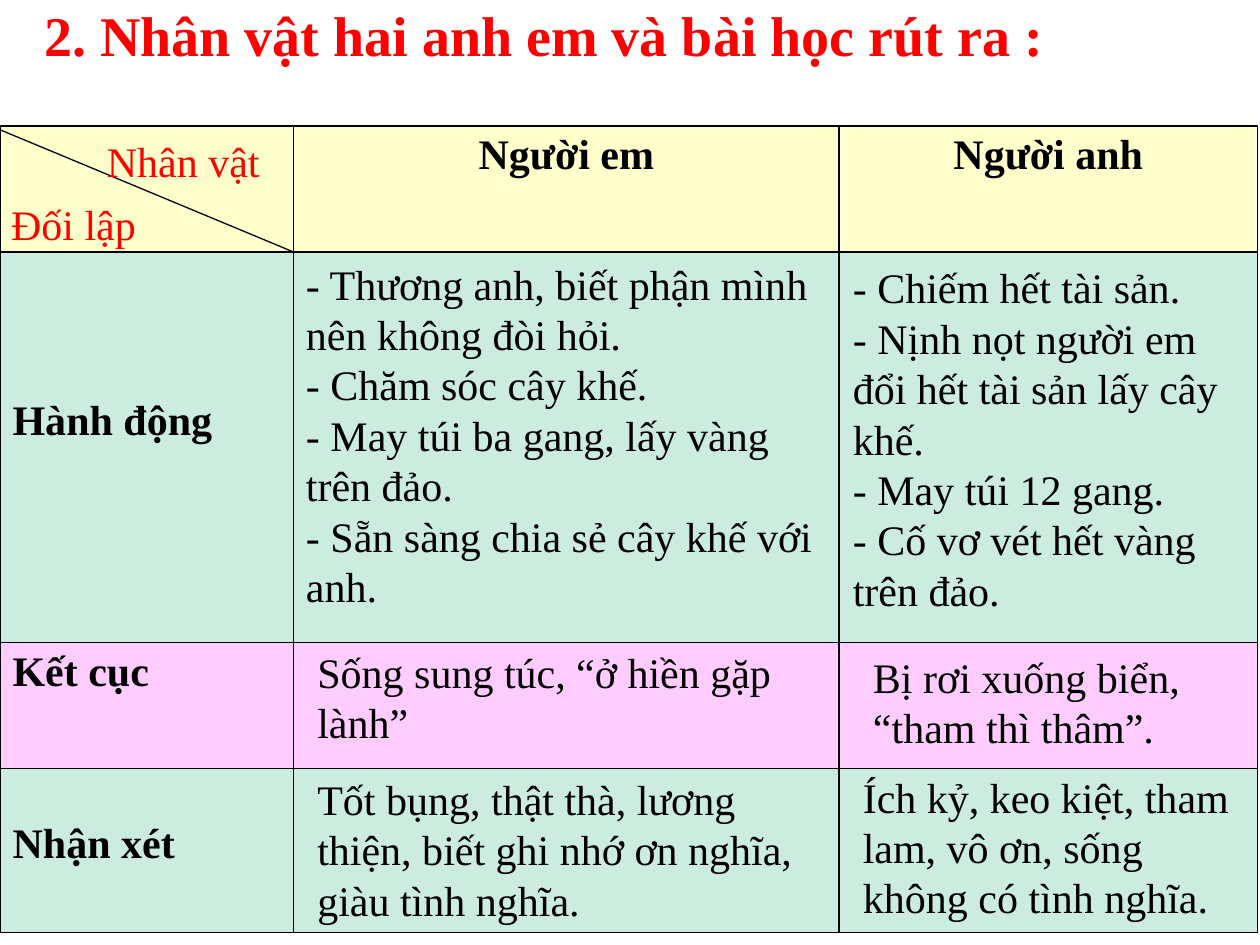
"""Build a slide contrasting the two brothers and the lesson drawn from them."""
from itertools import accumulate

from lxml.etree import SubElement
from pptx import Presentation
from pptx.dml.color import RGBColor
from pptx.enum.shapes import MSO_CONNECTOR
from pptx.enum.text import MSO_ANCHOR, PP_ALIGN
from pptx.oxml import parse_xml
from pptx.oxml.ns import qn
from pptx.util import Inches, Pt

FONT = "Times New Roman"
BLACK, RED = "000000", "FF0000"
CREAM, MINT, PINK = "FFFFCC", "CBECDE", "FFCCFF"
A_NS = "http://schemas.openxmlformats.org/drawingml/2006/main"

TITLE = "2. Nhân vật hai anh em và bài học rút ra :"
TABLE_TOP = 1
COLUMNS = [2.33, 4.33, 3.32]
HEADINGS = ["", "Người em", "Người anh"]
# Label, height, fill, lines of space above the label
ROWS = [
    ("", 1, CREAM, 0),
    ("Hành động", 3.1, MINT, 3),
    ("Kết cục", 1, PINK, 0),
    ("Nhận xét", 1.3, MINT, 1),
]
BLANK_LINE = 0.37
LEFTS = [0, *accumulate(COLUMNS)]
TOPS = list(accumulate([row[1] for row in ROWS], initial=TABLE_TOP))

# Row, column, offset from the cell corner, size, colour, paragraphs
NOTES = [
    (0, 0, (0.75, 0.03), (1.58, 0.5), RED, ["Nhân vật"]),
    (0, 0, (-0.01, 0.53), (1.76, 0.51), RED, ["Đối lập"]),
    (1, 1, (0, 0), (4.25, 2.93), BLACK, [
        "- Thương anh, biết phận mình nên không đòi hỏi.",
        "- Chăm sóc cây khế.",
        "- May túi ba gang, lấy vàng trên đảo.",
        "- Sẵn sàng chia sẻ cây khế với anh."]),
    (2, 1, (0.09, -0.02), (4.25, 0.91), BLACK, ["Sống sung túc, “ở hiền gặp lành”"]),
    (3, 1, (0.09, -0.01), (4.25, 1.31), BLACK, [
        "Tốt bụng, thật thà, lương thiện, biết ghi nhớ ơn nghĩa, giàu tình nghĩa."]),
    (1, 2, (0.01, 0.03), (3.32, 2.93), BLACK, [
        "- Chiếm hết tài sản.",
        "- Nịnh nọt người em đổi hết tài sản lấy cây khế.",
        "- May túi 12 gang.",
        "- Cố vơ vét hết vàng trên đảo."]),
    (2, 2, (0.17, 0.02), (3.08, 0.91), BLACK, ["Bị rơi xuống biển, “tham thì thâm”."]),
    (3, 2, (0.09, -0.03), (3.23, 1.31), BLACK, [
        "Ích kỷ, keo kiệt, tham lam, vô ơn, sống không có tình nghĩa."]),
]


def rgb(value):
    return RGBColor.from_string(value)


def write(frame, lines, colour=BLACK, size=24, bold=False, align=PP_ALIGN.LEFT):
    frame.word_wrap = True
    for index, line in enumerate(lines):
        paragraph = frame.add_paragraph() if index else frame.paragraphs[0]
        paragraph.alignment = align
        run = paragraph.add_run()
        run.text = line
        run.font.name, run.font.size, run.font.bold = FONT, Pt(size), bold
        run.font.color.rgb = rgb(colour)


def border(cell):
    properties = cell._tc.get_or_add_tcPr()
    for index, side in enumerate("LRTB"):
        properties.insert(index, parse_xml(
            f'<a:ln{side} xmlns:a="{A_NS}" w="{Pt(1)}"><a:solidFill>'
            f'<a:srgbClr val="{BLACK}"/></a:solidFill></a:ln{side}>'))


def add_title(slide):
    title = slide.shapes.title
    title.left, title.top = Inches(0.25), Inches(-0.05)
    title.width, title.height = Inches(8.92), Inches(0.64)
    title.text_frame.vertical_anchor = MSO_ANCHOR.TOP
    write(title.text_frame, [TITLE], RED, 32, True)


def add_comparison(slide):
    table = slide.shapes.add_table(
        len(ROWS), len(COLUMNS), 0, Inches(TABLE_TOP),
        Inches(LEFTS[-1]), Inches(TOPS[-1] - TABLE_TOP)).table
    for column, width in zip(table.columns, COLUMNS):
        column.width = Inches(width)
    for r, (label, height, fill, blanks) in enumerate(ROWS):
        table.rows[r].height = Inches(height)
        for c, heading in enumerate(HEADINGS):
            cell = table.cell(r, c)
            cell.fill.solid()
            cell.fill.fore_color.rgb = rgb(fill)
            border(cell)
            if r == 0 and heading:
                write(cell.text_frame, [heading], bold=True, align=PP_ALIGN.CENTER)
            elif c == 0 and label:
                cell.margin_top = Inches(0.05 + BLANK_LINE * blanks)
                write(cell.text_frame, [label], bold=True)


def add_diagonal(slide):
    diagonal = slide.shapes.add_connector(
        MSO_CONNECTOR.STRAIGHT, 0, Inches(TABLE_TOP + 0.03),
        Inches(LEFTS[1]), Inches(TOPS[1]))
    diagonal.line.color.rgb = rgb(BLACK)
    diagonal.line.width = Pt(0.75)
    SubElement(diagonal._element.spPr, qn("a:effectLst"))


def add_notes(slide):
    for row, column, (dx, dy), (width, height), colour, lines in NOTES:
        note = slide.shapes.add_textbox(
            Inches(LEFTS[column] + dx), Inches(TOPS[row] + dy),
            Inches(width), Inches(height))
        write(note.text_frame, lines, colour)


def main():
    deck = Presentation()
    deck.slide_width, deck.slide_height = Inches(10), Inches(7.5)
    slide = deck.slides.add_slide(deck.slide_layouts[5])
    add_title(slide)
    add_comparison(slide)
    add_diagonal(slide)
    add_notes(slide)
    deck.save("out.pptx")


if __name__ == "__main__":
    main()
